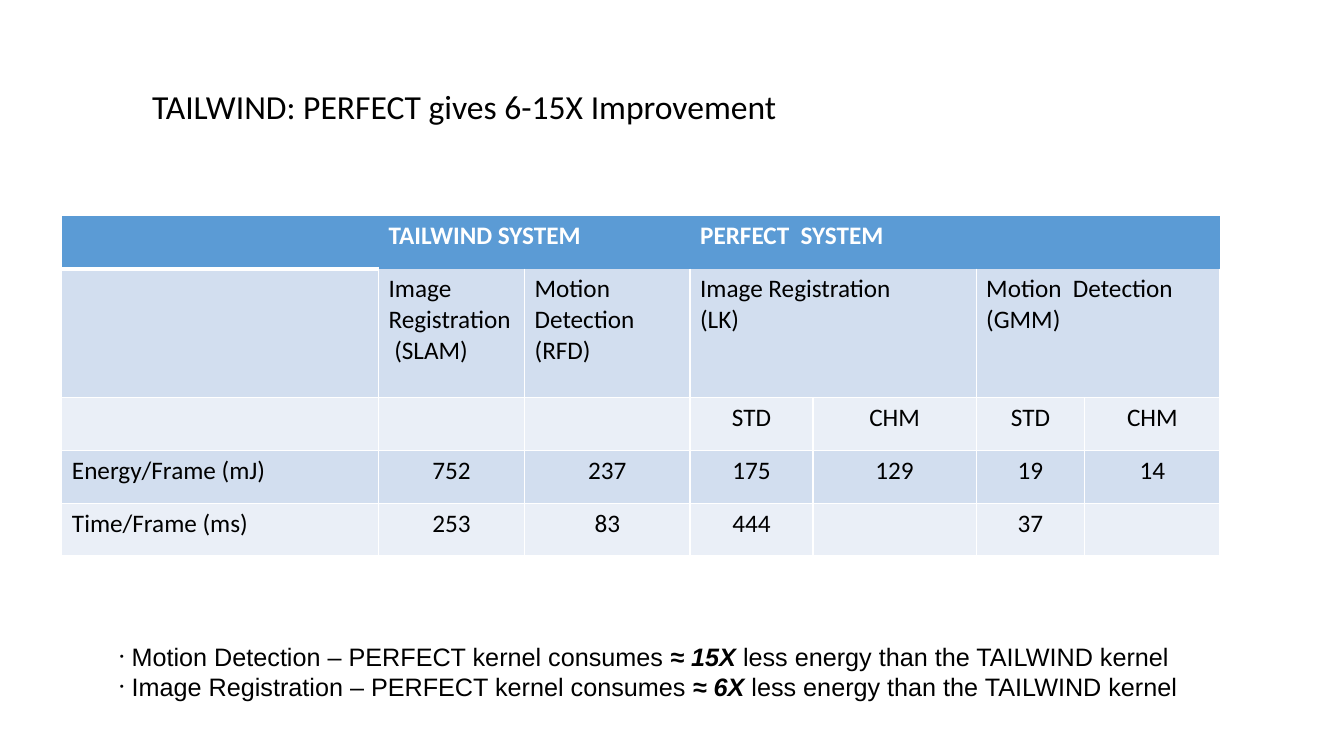
"""Build the TAILWIND versus PERFECT energy comparison slide."""
from dataclasses import dataclass

from lxml import etree
from pptx import Presentation
from pptx.dml.color import RGBColor
from pptx.enum import text
from pptx.oxml import ns
from pptx.util import Cm, Pt

WHITE, BLACK = "FFFFFF", "000000"
HEADER, BAND_DARK, BAND_LIGHT = "5B9BD5", "D2DEEF", "EAEFF7"
COL_WIDTHS = (7.98, 3.68, 4.17, 3.1, 4.11, 2.74, 3.4)
ROW_HEIGHTS = (1.33, 3.25, 1.33, 1.33, 1.33)
SIDES = "LRTB"


@dataclass
class Row:
    fill: str
    cells: tuple[str, ...]
    spans: tuple[tuple[int, int], ...] = ()


@dataclass
class Finding:
    lead: str
    factor: str
    tail: str = "less energy than the TAILWIND kernel"


ROWS = (
    Row(HEADER, ("", "TAILWIND SYSTEM", "", "PERFECT  SYSTEM", "", "", ""), ((1, 2), (3, 6))),
    Row(BAND_DARK, ("", "Image Registration  (SLAM)", "Motion Detection (RFD)",
                    "Image Registration\n(LK)", "", "Motion  Detection\n(GMM)", ""),
        ((3, 4), (5, 6))),
    Row(BAND_LIGHT, ("", "", "", "STD", "CHM", "STD", "CHM")),
    Row(BAND_DARK, ("Energy/Frame (mJ)", "752", "237", "175", "129", "19", "14")),
    Row(BAND_LIGHT, ("Time/Frame (ms)", "253", "83", "444", "", "37", "")),
)
FINDINGS = (
    Finding("Motion Detection – PERFECT kernel consumes ", "≈ 15X "),
    Finding("Image Registration – PERFECT kernel consumes ", "≈ 6X "),
)


def color(value: str) -> RGBColor:
    return RGBColor.from_string(value)


def style(font, name: str, size: float, fill: str, bold: bool = False, italic: bool = False) -> None:
    font.name, font.size, font.bold, font.italic = name, Pt(size), bold, italic
    font.color.rgb = color(fill)


def border_widths(row: int, col: int) -> dict[str, int]:
    if row == 0:
        return {"L": 1, "T": 1, "B": 3} if col == 0 else {}
    if row == 1 and col > 0:
        return {"L": 1, "R": 1, "B": 1}
    return dict.fromkeys(SIDES, 1)


def set_borders(cell, widths: dict[str, int]) -> None:
    tc_pr = cell._tc.get_or_add_tcPr()
    for i, side in enumerate(SIDES):
        ln = etree.Element(ns.qn(f"a:ln{side}"), w=str(Pt(widths.get(side, 0))))
        if side in widths:
            fill = etree.SubElement(ln, ns.qn("a:solidFill"))
            etree.SubElement(fill, ns.qn("a:srgbClr"), val=WHITE)
        else:
            etree.SubElement(ln, ns.qn("a:noFill"))
        tc_pr.insert(i, ln)


def fill_cell(cell, label: str, row: int, col: int, fill: str) -> None:
    cell.fill.solid()
    cell.fill.fore_color.rgb = color(fill)
    set_borders(cell, border_widths(row, col))
    cell.text_frame.text = label
    for p in cell.text_frame.paragraphs:
        if row > 1 and col > 0:
            p.alignment = text.PP_ALIGN.CENTER
        style(p.font, "Calibri", 18, BLACK)
        for r in p.runs:
            style(r.font, "Calibri", 18, WHITE if row == 0 else BLACK, bold=row == 0)


def add_results(s) -> None:
    table = s.shapes.add_table(len(ROWS), len(COL_WIDTHS), Cm(1.56), Cm(5.44),
                               Cm(sum(COL_WIDTHS)), Cm(sum(ROW_HEIGHTS))).table
    for column, width in zip(table.columns, COL_WIDTHS):
        column.width = Cm(width)
    for i, (row, height) in enumerate(zip(ROWS, ROW_HEIGHTS)):
        table.rows[i].height = Cm(height)
        for j, label in enumerate(row.cells):
            fill_cell(table.cell(i, j), label, i, j, row.fill)
        for first, last in row.spans:
            table.cell(i, first).merge(table.cell(i, last))


def add_bullet(p) -> None:
    p_pr = p._p.get_or_add_pPr()
    p_pr.set("marL", str(Cm(0.3)))
    p_pr.set("indent", str(Cm(-0.3)))
    etree.SubElement(p_pr, ns.qn("a:buSzPct"), val="45000")
    etree.SubElement(p_pr, ns.qn("a:buFont"), typeface="Arial")
    etree.SubElement(p_pr, ns.qn("a:buChar"), char="•")


def add_findings(s) -> None:
    tf = s.shapes.add_textbox(Cm(2.77), Cm(16.03), Cm(27.53), Cm(2.57)).text_frame
    tf.word_wrap = True
    for i, finding in enumerate(FINDINGS):
        p = tf.add_paragraph() if i else tf.paragraphs[0]
        add_bullet(p)
        for part in (finding.lead, finding.factor, finding.tail):
            r = p.add_run()
            r.text = part
            strong = part == finding.factor
            style(r.font, "Arial", 18, BLACK, bold=strong, italic=strong)


def add_title(s) -> None:
    sp = s.shapes.title
    sp.left, sp.top, sp.width, sp.height = Cm(3.58), Cm(2.03), Cm(16.54), Cm(2.06)
    tf = sp.text_frame
    tf.text = "TAILWIND: PERFECT gives 6-15X Improvement"
    tf.word_wrap = True
    tf.auto_size = text.MSO_AUTO_SIZE.NONE
    tf.vertical_anchor = text.MSO_ANCHOR.TOP
    p = tf.paragraphs[0]
    p.alignment = text.PP_ALIGN.LEFT
    style(p.runs[0].font, "Calibri", 24, BLACK)


def main() -> None:
    prs = Presentation()
    prs.slide_width, prs.slide_height = Cm(33.87), Cm(19.05)
    s = prs.slides.add_slide(prs.slide_layouts[5])
    add_title(s)
    add_results(s)
    add_findings(s)
    prs.save("out.pptx")


if __name__ == "__main__":
    main()
